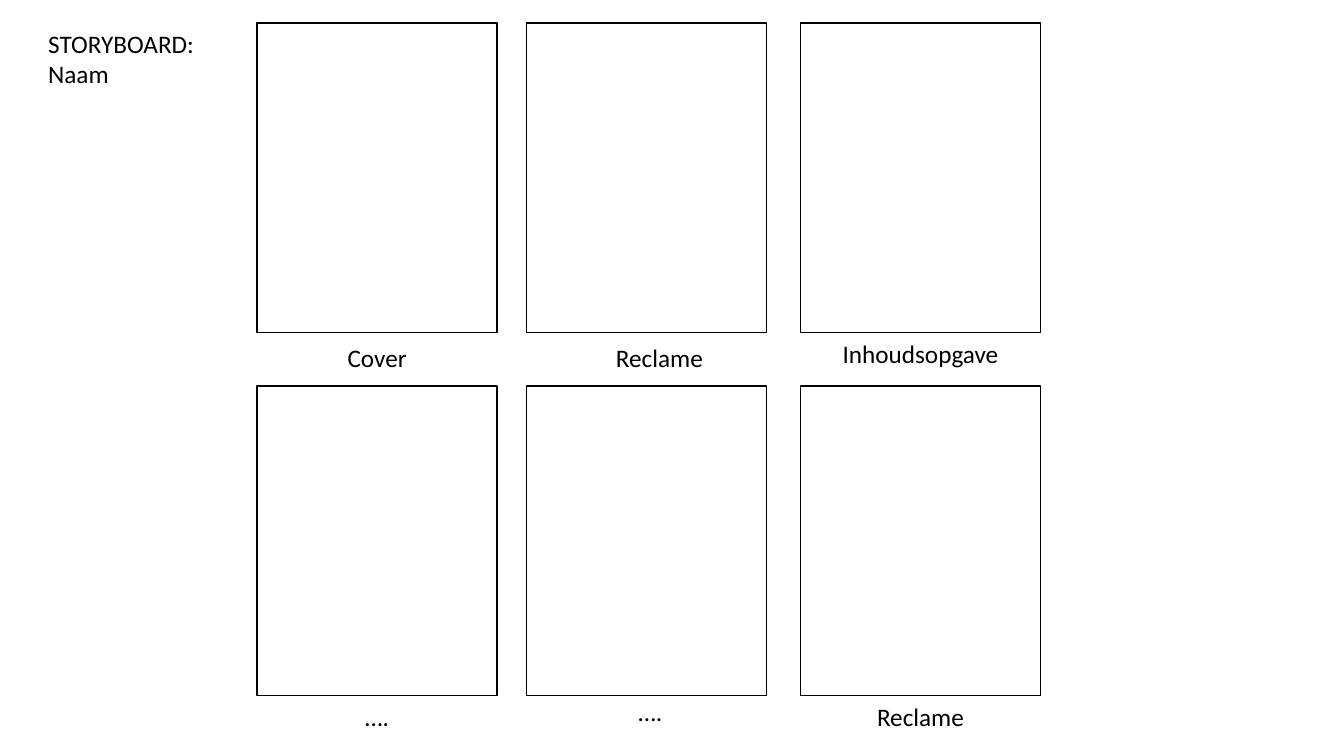
from dataclasses import dataclass

from pptx import Presentation
from pptx.dml.color import RGBColor
from pptx.enum.shapes import MSO_SHAPE as Shape
from pptx.enum.text import MSO_AUTO_SIZE as AutoSize, PP_ALIGN as Align
from pptx.util import Inches, Pt


@dataclass(frozen=True)
class Theme:
    ink: RGBColor = RGBColor(0, 0, 0)
    paper: RGBColor = RGBColor(255, 255, 255)
    font: str = "Calibri"
    text_size: float = 18
    outline: float = 1


THEME = Theme()
SLIDE_WIDTH, SLIDE_HEIGHT = 13.33, 7.5
COLUMNS = (2.55, 5.22, 7.94)
ROWS = (0.23, 3.83)
PAGE_WIDTH, PAGE_HEIGHT = 2.38, 3.07
LINE_HEIGHT = 0.4

# Caption, width, shift from the page's centre, gap below the page
CAPTIONS = (
    (("Cover", 0.79, 0, 0.05), ("Reclame", 1.07, 0.13, 0.05), ("Inhoudsopgave", 1.76, 0, 0.01)),
    (("….", 0.44, 0, 0.01), ("….", 0.44, 0.04, -0.04), ("Reclame", 1.07, 0, 0.01)),
)


def add_text(slide, text, *, left, top, width, height=LINE_HEIGHT, align=Align.LEFT):
    box = slide.shapes.add_textbox(Inches(left), Inches(top), Inches(width), Inches(height))
    frame = box.text_frame
    frame.word_wrap = False
    frame.auto_size = AutoSize.SHAPE_TO_FIT_TEXT
    frame.text = text
    for paragraph in frame.paragraphs:
        paragraph.alignment = align
        paragraph.font.name = THEME.font
        paragraph.font.size = Pt(THEME.text_size)
        paragraph.font.color.rgb = THEME.ink


def add_page(slide, left, top):
    page = slide.shapes.add_shape(
        Shape.RECTANGLE, Inches(left), Inches(top), Inches(PAGE_WIDTH), Inches(PAGE_HEIGHT)
    )
    page.shadow.inherit = False
    page.fill.solid()
    page.fill.fore_color.rgb = THEME.paper
    page.line.color.rgb = THEME.ink
    page.line.width = Pt(THEME.outline)


def add_caption(slide, left, top, caption):
    text, width, shift, gap = caption
    add_text(
        slide,
        text,
        left=left + (PAGE_WIDTH - width) / 2 + shift,
        top=top + PAGE_HEIGHT + gap,
        width=width,
        align=Align.CENTER,
    )


def main():
    deck = Presentation()
    deck.slide_width, deck.slide_height = Inches(SLIDE_WIDTH), Inches(SLIDE_HEIGHT)
    storyboard = deck.slides.add_slide(deck.slide_layouts[6])
    add_text(storyboard, "STORYBOARD:\nNaam", left=0.38, top=ROWS[0], width=1.66, height=0.71)
    for top, captions in zip(ROWS, CAPTIONS):
        for left, caption in zip(COLUMNS, captions):
            add_page(storyboard, left, top)
            add_caption(storyboard, left, top, caption)
    deck.save("out.pptx")


if __name__ == "__main__":
    main()
